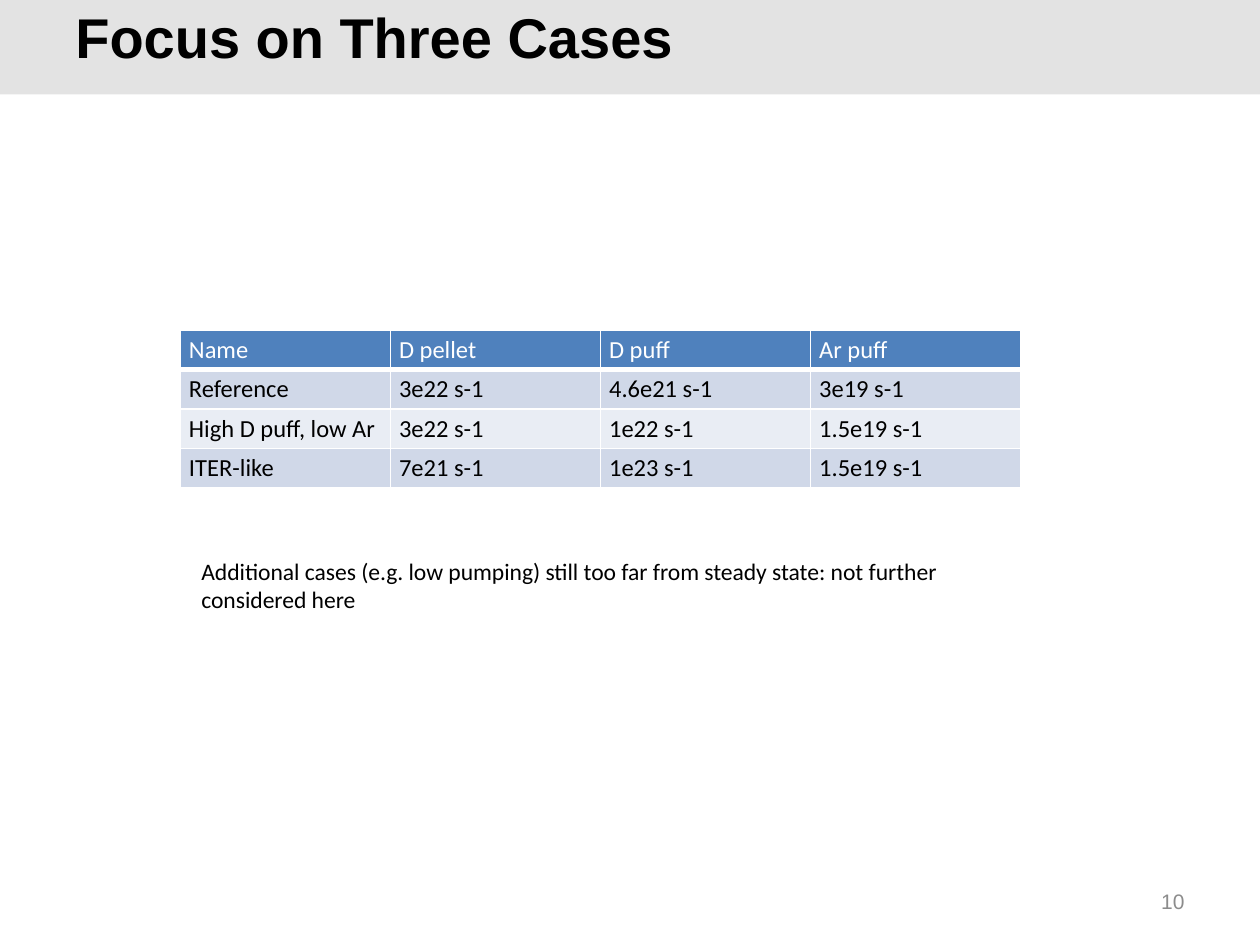
from lxml.etree import SubElement
from pptx import Presentation
from pptx.dml.color import RGBColor
from pptx.enum.shapes import MSO_SHAPE
from pptx.enum.text import MSO_ANCHOR, PP_ALIGN
from pptx.oxml.ns import qn
from pptx.util import Inches, Pt

COLORS = {
    "band": "E3E3E3",
    "text": "000000",
    "number": "8C8C8C",
    "white": "FFFFFF",
    "header": "4F81BD",
    "odd": "D0D8E8",
    "even": "E9EDF4",
}

CASES = [
    ["Name", "D pellet", "D puff", "Ar puff"],
    ["Reference", "3e22 s-1", "4.6e21 s-1", "3e19 s-1"],
    ["High D puff, low Ar", "3e22 s-1", "1e22 s-1", "1.5e19 s-1"],
    ["ITER-like", "7e21 s-1", "1e23 s-1", "1.5e19 s-1"],
]


def color(name):
    return RGBColor.from_string(COLORS[name])


def style(paragraph, font_name, size, color_name, bold=False):
    for run in paragraph.runs:
        run.font.name = font_name
        run.font.size = Pt(size)
        run.font.bold = bold
        run.font.color.rgb = color(color_name)


def add_band(slide, width):
    band = slide.shapes.add_shape(MSO_SHAPE.RECTANGLE, 0, 0, width, Inches(0.75))
    band.shadow.inherit = False
    band.fill.solid()
    band.fill.fore_color.rgb = color("band")
    band.line.fill.background()


def add_text(slide, text, box, font_name, size, color_name,
             bold=False, anchor=MSO_ANCHOR.TOP, align=PP_ALIGN.LEFT):
    frame = slide.shapes.add_textbox(*map(Inches, box)).text_frame
    frame.word_wrap = True
    frame.vertical_anchor = anchor
    frame.text = text
    paragraph = frame.paragraphs[0]
    paragraph.alignment = align
    style(paragraph, font_name, size, color_name, bold)
    return paragraph


def set_borders(cell, bottom):
    properties = cell._tc.get_or_add_tcPr()
    widths = {"lnL": 1, "lnR": 1, "lnT": 1, "lnB": bottom}
    for position, (side, width) in enumerate(widths.items()):
        border = SubElement(properties, qn(f"a:{side}"), w=str(Pt(width)))
        fill = SubElement(border, qn("a:solidFill"))
        SubElement(fill, qn("a:srgbClr"), val=COLORS["white"])
        properties.insert(position, border)


def fill_cell(cell, text, row_index):
    is_header = row_index == 0
    cell.text = text
    cell.margin_left = cell.margin_right = Inches(0.07)
    cell.margin_top = cell.margin_bottom = Inches(0.04)
    style(cell.text_frame.paragraphs[0], "Calibri", 14,
          "white" if is_header else "text")
    cell.fill.solid()
    cell.fill.fore_color.rgb = color(
        "header" if is_header else "odd" if row_index % 2 else "even")
    set_borders(cell, 3 if is_header else 1)


def add_case_table(slide):
    table = slide.shapes.add_table(
        len(CASES), len(CASES[0]),
        Inches(1.43), Inches(2.62), Inches(6.67), Inches(1.22)).table
    for row_index, case in enumerate(CASES):
        for column_index, text in enumerate(case):
            fill_cell(table.cell(row_index, column_index), text, row_index)


def main():
    presentation = Presentation()
    presentation.slide_width = Inches(10)
    presentation.slide_height = Inches(7.5)
    slide = presentation.slides.add_slide(presentation.slide_layouts[6])

    add_band(slide, presentation.slide_width)
    title = add_text(slide, "Focus on Three Cases", (0.5, 0.08, 8.25, 0.5),
                     "Arial", 32, "text", bold=True, anchor=MSO_ANCHOR.MIDDLE)
    title.line_spacing = Pt(32)
    add_text(slide, "10", (7.17, 6.95, 2.33, 0.4), "Arial", 12, "number",
             anchor=MSO_ANCHOR.MIDDLE, align=PP_ALIGN.RIGHT)
    add_case_table(slide)
    add_text(slide,
             "Additional cases (e.g. low pumping) still too far from steady "
             "state: not further considered here",
             (1.5, 4.37, 6.56, 0.56), "Calibri", 13.5, "text")

    presentation.save("out.pptx")


if __name__ == "__main__":
    main()
